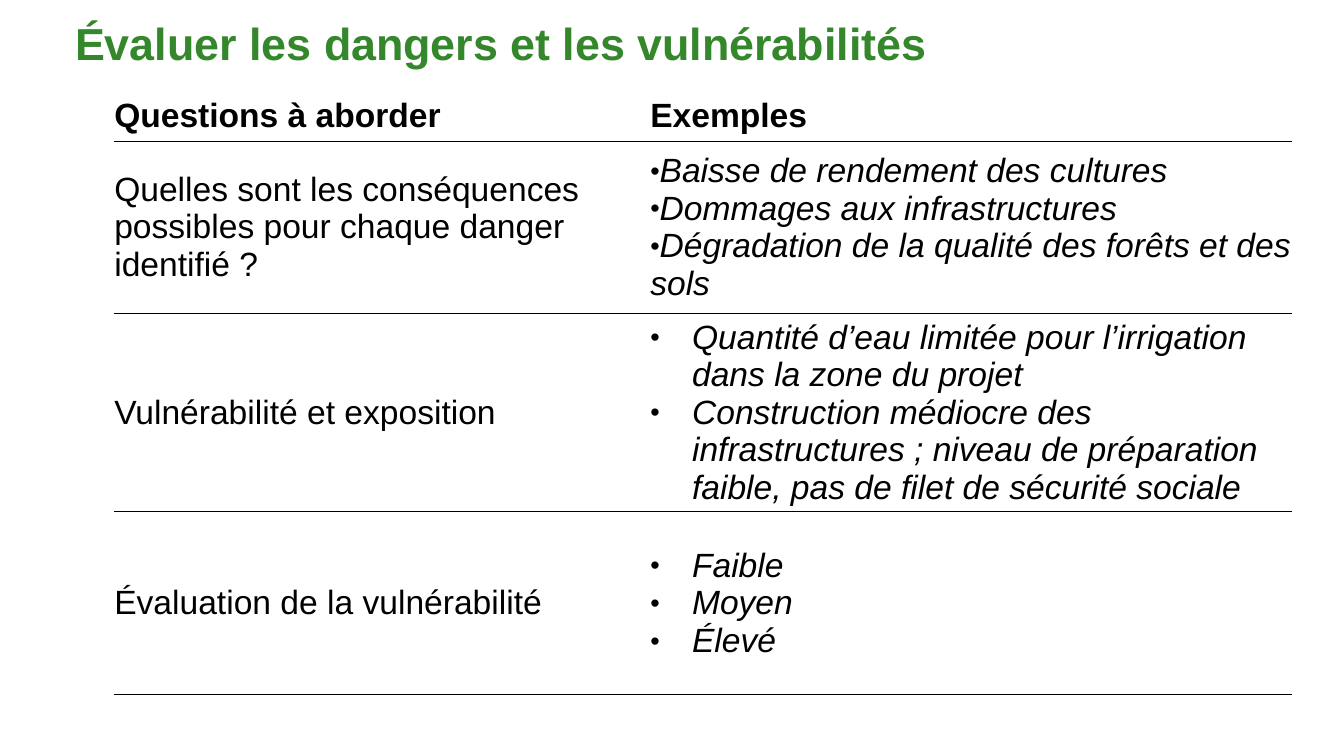
from lxml.etree import SubElement
from pptx import Presentation
from pptx.dml.color import RGBColor
from pptx.enum.text import MSO_ANCHOR, PP_ALIGN
from pptx.oxml import parse_xml
from pptx.oxml.ns import nsdecls, qn
from pptx.util import Cm, Pt

# Content: a question, its examples and the left margin of their bullets in cm
TITLE = "Évaluer les dangers et les vulnérabilités"
HEADINGS = ("Questions à aborder", "Exemples")
TOPICS = [
    ("Quelles sont les conséquences possibles pour chaque danger identifié ?",
     ["Baisse de rendement des cultures",
      "Dommages aux infrastructures",
      "Dégradation de la qualité des forêts et des sols"], 0),
    ("Vulnérabilité et exposition",
     ["Quantité d’eau limitée pour l’irrigation dans la zone du projet",
      "Construction médiocre des infrastructures ; niveau de préparation "
      "faible, pas de filet de sécurité sociale"], 0.79),
    ("Évaluation de la vulnérabilité", ["Faible", "Moyen", "Élevé"], 0.79),
]

COLORS = {"title": "34872B", "text": "000000", "rule": "000000"}
FONT = "Arial"
HANGING = 0.79
COLUMN_WIDTHS = (10.13, 12.12)
ROW_HEIGHTS = (0.97, 3.25, 3.38, 3.45)
RIGHT_INSETS = (0.15, 0)


def add_bullet(para, margin):
    properties = para._p.get_or_add_pPr()
    properties.set("marL", str(Cm(margin)))
    properties.set("indent", str(-Cm(HANGING)))
    color = SubElement(properties, qn("a:buClr"))
    SubElement(color, qn("a:srgbClr"), val=COLORS["text"])
    SubElement(properties, qn("a:buSzPct"), val="80000")
    SubElement(properties, qn("a:buFont"), typeface=FONT)
    SubElement(properties, qn("a:buChar"), char="•")


def write(frame, lines, size=18, color="text", bold=False, italic=False, bullet_margin=None):
    """Fill a text frame with one paragraph per line."""
    for index, line in enumerate(lines):
        para = frame.paragraphs[0] if index == 0 else frame.add_paragraph()
        if bullet_margin is not None:
            add_bullet(para, bullet_margin)
        para.alignment = PP_ALIGN.LEFT
        span = para.add_run()
        span.text = line
        span.font.name = FONT
        span.font.size = Pt(size)
        span.font.bold = bold
        span.font.italic = italic
        span.font.color.rgb = RGBColor.from_string(COLORS[color])


def format_cell(cell, right_inset):
    """Clear the fill, set the margins and rule the bottom edge."""
    cell.vertical_anchor = MSO_ANCHOR.MIDDLE
    cell.margin_left, cell.margin_right = Cm(0), Cm(right_inset)
    cell.margin_top = cell.margin_bottom = Cm(0.1)
    cell.fill.background()
    cell._tc.get_or_add_tcPr().insert(0, parse_xml(
        f'<a:lnB {nsdecls("a")} w="{Pt(0.5)}"><a:solidFill>'
        f'<a:srgbClr val="{COLORS["rule"]}"/></a:solidFill></a:lnB>'))


def main():
    deck = Presentation()
    deck.slide_width, deck.slide_height = Cm(25.4), Cm(14.29)
    page = deck.slides.add_slide(deck.slide_layouts[5])

    # Title
    title = page.shapes.title
    title.left, title.top, title.width, title.height = Cm(1.17), Cm(0), Cm(23.67), Cm(1.6)
    frame = title.text_frame
    frame.margin_left = frame.margin_right = frame.margin_top = frame.margin_bottom = Cm(0.25)
    frame.vertical_anchor = MSO_ANCHOR.MIDDLE
    write(frame, [TITLE], size=24, color="title", bold=True)

    # Table without a style
    table = page.shapes.add_table(
        len(ROW_HEIGHTS), len(COLUMN_WIDTHS), Cm(2.16), Cm(1.7),
        Cm(sum(COLUMN_WIDTHS)), Cm(sum(ROW_HEIGHTS))).table
    table.horz_banding = False
    style = table._tbl.tblPr.find(qn("a:tableStyleId"))
    style.text = "{2D5ABB26-0587-4C30-8999-92F81FD0307C}"
    for column, width in zip(table.columns, COLUMN_WIDTHS):
        column.width = Cm(width)
    for row, height in zip(table.rows, ROW_HEIGHTS):
        row.height = Cm(height)
        for cell, inset in zip(row.cells, RIGHT_INSETS):
            format_cell(cell, inset)

    # Headings, then one row per topic
    for column, heading in enumerate(HEADINGS):
        write(table.cell(0, column).text_frame, [heading], bold=True)
    for row, (question, examples, margin) in enumerate(TOPICS, start=1):
        write(table.cell(row, 0).text_frame, [question])
        write(table.cell(row, 1).text_frame, examples, italic=True, bullet_margin=margin)

    deck.save("out.pptx")


if __name__ == "__main__":
    main()
